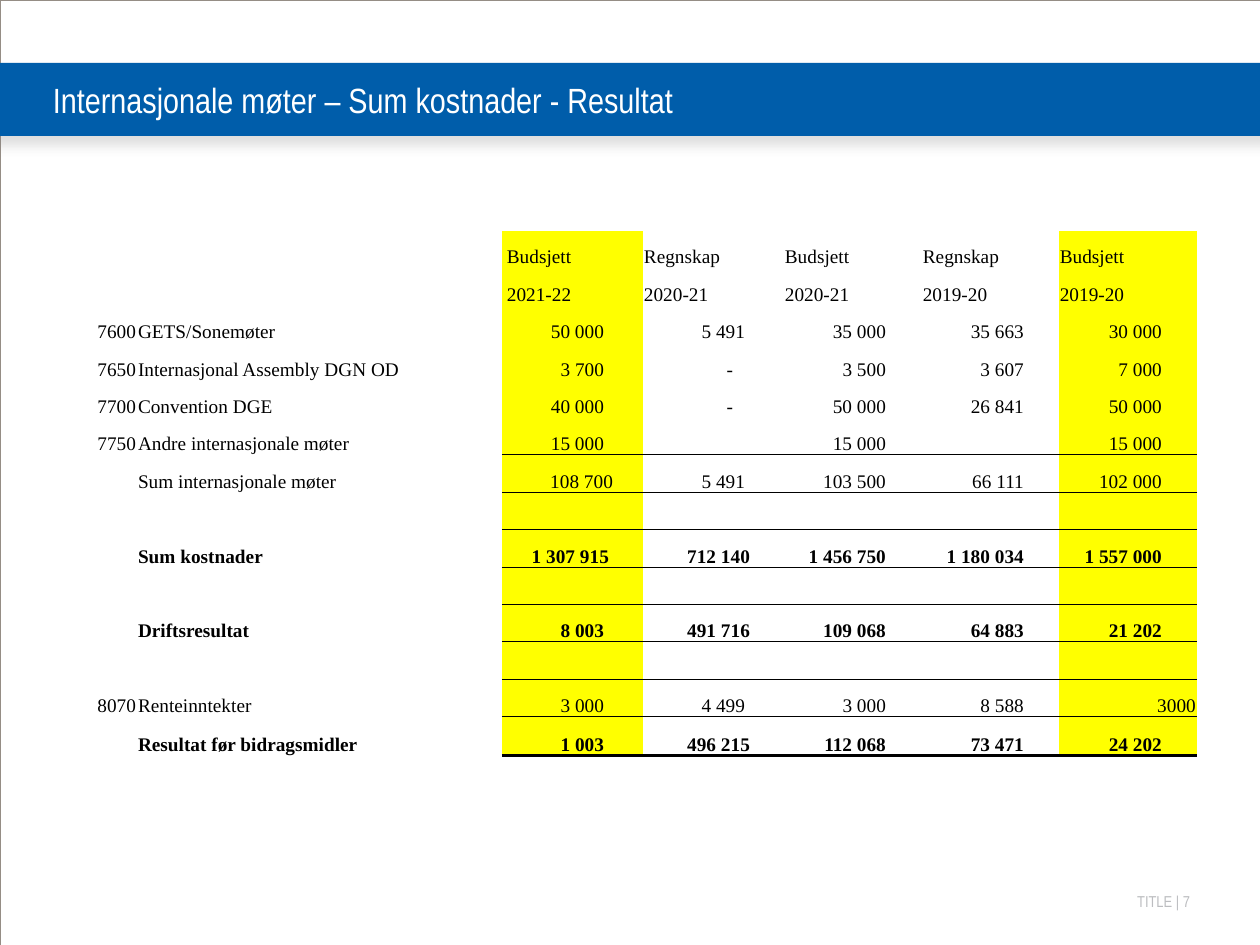
from lxml import etree
from pptx import Presentation
from pptx.dml.color import RGBColor
from pptx.enum.shapes import MSO_SHAPE
from pptx.enum.text import MSO_ANCHOR, MSO_AUTO_SIZE, PP_ALIGN
from pptx.oxml import parse_xml
from pptx.oxml.ns import nsdecls, qn
from pptx.util import Pt

PX = 914400 // 126
WHITE = RGBColor(0xFF, 0xFF, 0xFF)
BLACK = RGBColor(0x00, 0x00, 0x00)
BLUE = RGBColor(0x00, 0x5D, 0xAA)
YELLOW = RGBColor(0xFF, 0xFF, 0x00)
GREY = RGBColor(0xBC, 0xBD, 0xC0)
TAUPE = RGBColor(0x95, 0x8D, 0x85)
SANS, SERIF = "Arial Narrow", "Times New Roman"
NO_STYLE = "{2D5ABB26-0587-4C30-8999-92F81FD0307C}"

COLUMNS = [64, 348, 17, 141, 141, 138, 137, 138]
ROW_PITCH, LAST_ROW = 37.4, 39
FIRST_VALUE, HEADER_ROWS = 3, 2
HIGHLIGHTED = (3, 7)
BOLD_ROWS = (8, 10, 13)
RULES = {5: 0.5, 6: 0.5, 8: 0.5, 10: 0.5, 12: 0.5, 13: 2}
# Space right of the figures, by column and for single cells (row, column)
VALUE_INSETS = {3: 39, 4: 39, 5: 36, 6: 35, 7: 35}
CELL_INSETS = {(6, 3): 30, (8, 3): 34, (3, 4): 51, (4, 4): 51,
               (8, 4): 34, (10, 4): 34, (13, 4): 34, (12, 7): 1}

# Account, label, then one figure per period
ROWS = [
    ("", "", "Budsjett", "Regnskap", "Budsjett", "Regnskap", "Budsjett"),
    ("", "", "2021-22", "2020-21", "2020-21", "2019-20", "2019-20"),
    ("7600", "GETS/Sonemøter", "50 000", "5 491", "35 000", "35 663", "30 000"),
    ("7650", "Internasjonal Assembly DGN OD",
     "3 700", "-", "3 500", "3 607", "7 000"),
    ("7700", "Convention DGE", "40 000", "-", "50 000", "26 841", "50 000"),
    ("7750", "Andre internasjonale møter", "15 000", "", "15 000", "", "15 000"),
    ("", "Sum internasjonale møter",
     "108 700", "5 491", "103 500", "66 111", "102 000"),
    ("",) * 7,
    ("", "Sum kostnader",
     "1 307 915", "712 140", "1 456 750", "1 180 034", "1 557 000"),
    ("",) * 7,
    ("", "Driftsresultat", "8 003", "491 716", "109 068", "64 883", "21 202"),
    ("",) * 7,
    ("8070", "Renteinntekter", "3 000", "4 499", "3 000", "8 588", "3000"),
    ("", "Resultat før bidragsmidler",
     "1 003", "496 215", "112 068", "73 471", "24 202"),
]


def px(*lengths):
    return [length * PX for length in lengths]


def style_text(frame, font, size, color, align=PP_ALIGN.LEFT, bold=False):
    para = frame.paragraphs[0]
    para.alignment = align
    for span in para.runs:
        span.font.name, span.font.size = font, Pt(size)
        span.font.color.rgb, span.font.bold = color, bold


def clear_insets(frame):
    frame.margin_left = frame.margin_right = 0
    frame.margin_top = frame.margin_bottom = 0
    frame.word_wrap = True
    frame.auto_size = MSO_AUTO_SIZE.NONE


def add_footer(page):
    box = page.shapes.add_textbox(*px(970, 892, 220, 19))
    clear_insets(box.text_frame)
    box.text_frame.text = "TITLE | 7"
    style_text(box.text_frame, SANS, 9, GREY, PP_ALIGN.RIGHT)


def add_page_outline(page):
    outline = page.shapes.add_shape(MSO_SHAPE.RECTANGLE, *px(0, 0, 1260, 945))
    outline.shadow.inherit = False
    outline.fill.background()
    outline.line.color.rgb = TAUPE
    outline.line.width = Pt(0.13)


def add_title_band(page):
    band = page.shapes.add_shape(MSO_SHAPE.RECTANGLE, *px(-10, 63, 1281, 73))
    band.fill.solid()
    band.fill.fore_color.rgb = BLUE
    band.line.fill.background()
    band._element.spPr.append(parse_xml(
        f'<a:effectLst {nsdecls("a")}><a:outerShdw blurRad="{Pt(7)}" '
        f'dist="{Pt(4.8)}" dir="5400000" rotWithShape="0">'
        '<a:srgbClr val="808080"><a:alpha val="25000"/></a:srgbClr>'
        '</a:outerShdw></a:effectLst>'))


def set_title(page, text):
    title = page.shapes.title
    title.left, title.top, title.width, title.height = px(53, 63, 1207, 73)
    frame = title.text_frame
    clear_insets(frame)
    frame.vertical_anchor = MSO_ANCHOR.MIDDLE
    frame.text = text
    style_text(frame, SANS, 20, WHITE)
    page.shapes._spTree.append(title._element)  # in front of the band


def add_border(cell, tag, points):
    cell._tc.get_or_add_tcPr().append(parse_xml(
        f'<a:{tag} {nsdecls("a")} w="{Pt(points)}"><a:solidFill>'
        f'<a:srgbClr val="{BLACK}"/></a:solidFill></a:{tag}>'))


def fill_cell(cell, row, column, text):
    is_value = column >= FIRST_VALUE
    is_figure = is_value and row >= HEADER_ROWS
    cell.margin_left = cell.margin_right = cell.margin_top = PX
    cell.margin_bottom = 0
    cell.vertical_anchor = MSO_ANCHOR.BOTTOM
    if is_figure:
        inset = CELL_INSETS.get((row, column), VALUE_INSETS[column])
        cell.margin_right = inset * PX
    elif column == FIRST_VALUE:
        cell.margin_left = 5 * PX

    if is_value:
        for tag, ruled_row in (("lnT", row - 1), ("lnB", row)):
            if ruled_row in RULES:
                add_border(cell, tag, RULES[ruled_row])
    if column in HIGHLIGHTED:
        cell.fill.solid()
        cell.fill.fore_color.rgb = YELLOW
    else:
        cell.fill.background()

    if text:
        cell.text_frame.text = text
        align = PP_ALIGN.RIGHT if is_figure or column == 0 else PP_ALIGN.LEFT
        style_text(cell.text_frame, SERIF, 11, BLACK, align, row in BOLD_ROWS)
    else:
        # Keeps an empty cell from stretching its row
        para = cell.text_frame.paragraphs[0]
        etree.SubElement(para._p, qn("a:endParaRPr"), sz="1100")


def add_budget_table(page):
    edges = [round(ROW_PITCH * index) for index in range(len(ROWS))]
    edges.append(edges[-1] + LAST_ROW)
    table = page.shapes.add_table(
        len(ROWS), len(COLUMNS), *px(73, 231, sum(COLUMNS), edges[-1])).table
    table.first_row = table.horz_banding = False
    table._tbl.tblPr.find(qn("a:tableStyleId")).text = NO_STYLE
    for column, width in zip(table.columns, COLUMNS):
        column.width = width * PX
    for row, (account, label, *values) in enumerate(ROWS):
        table.rows[row].height = (edges[row + 1] - edges[row]) * PX
        for column, text in enumerate([account, label, "", *values]):
            fill_cell(table.cell(row, column), row, column, text)


def main():
    deck = Presentation()
    deck.slide_width, deck.slide_height = px(1260, 945)
    page = deck.slides.add_slide(deck.slide_layouts[5])
    add_footer(page)
    add_page_outline(page)
    add_title_band(page)
    set_title(page, "Internasjonale møter – Sum kostnader - Resultat")
    add_budget_table(page)
    deck.save("out.pptx")


if __name__ == "__main__":
    main()
